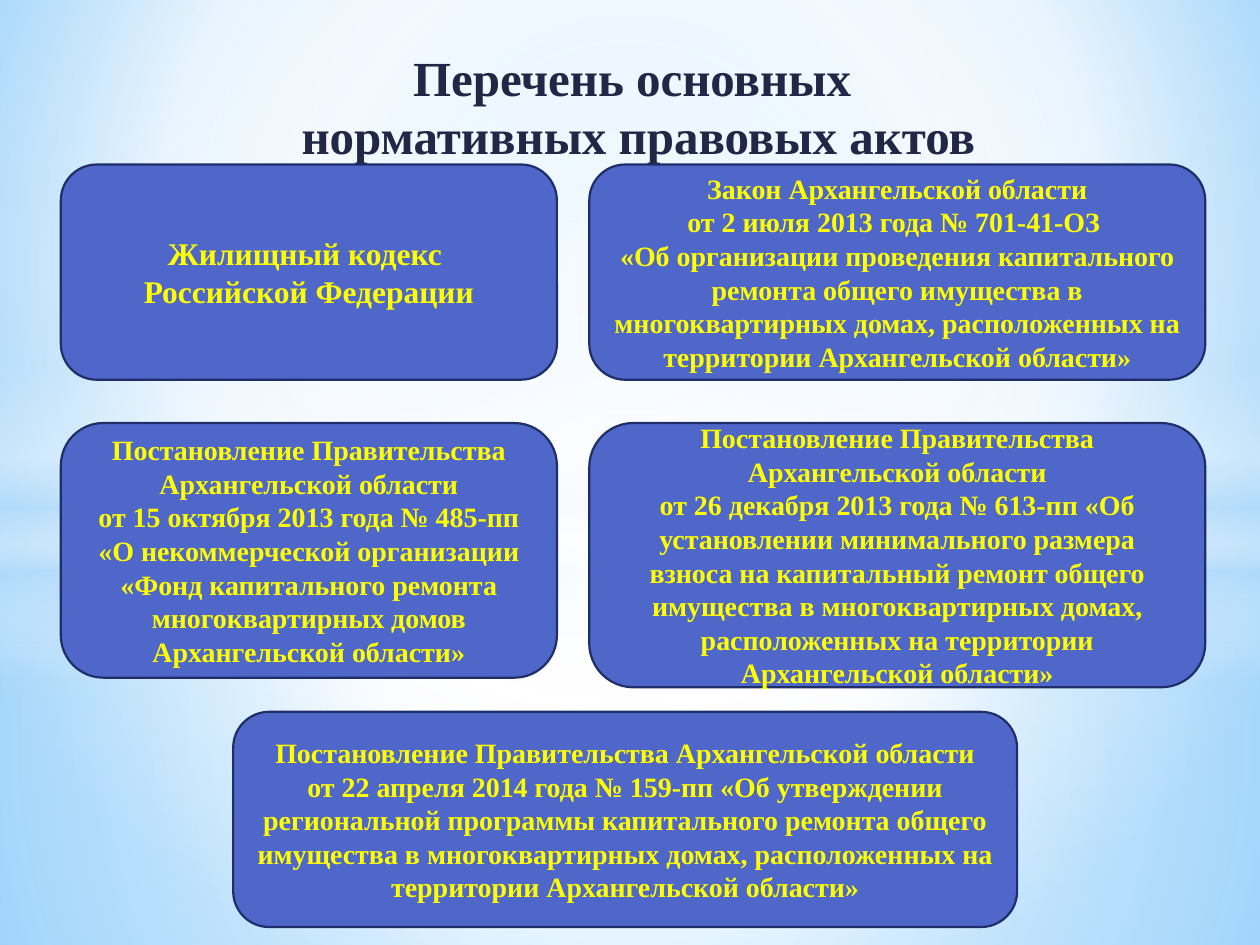
"""Build a slide that lists the main housing repair laws as rounded cards."""
from lxml.etree import SubElement
from pptx import Presentation
from pptx.dml.color import RGBColor as RGB
from pptx.enum.shapes import MSO_SHAPE as Shape
from pptx.enum.text import MSO_ANCHOR as Anchor, MSO_AUTO_SIZE as Auto, PP_ALIGN as Align
from pptx.oxml.ns import qn
from pptx.util import Pt

COLORS = {"title": "212745", "text": "FFFF00", "card": "4E67C8", "edge": "1F2E69",
          "white": "FFFFFF", "pale": "B4DCFA", "sky": "9ED5FF", "blue": "5BB9FF"}
FONT = "Times New Roman"


def write(shape, text, size=16, color="text", indent=0):
    frame = shape.text_frame
    frame.word_wrap = True
    frame.auto_size = Auto.NONE
    frame.vertical_anchor = Anchor.MIDDLE
    frame.text = text
    for para in frame.paragraphs:
        para.alignment = Align.CENTER
        if indent:
            props = para._p.get_or_add_pPr()
            props.set("marL", str(Pt(indent)))
            props.set("indent", "0")
        for run in para.runs:
            font = run.font
            font.name, font.size, font.bold = FONT, Pt(size), True
            font.color.rgb = RGB.from_string(COLORS[color])


def shade(fill, root, stops, focus=None):
    fill.gradient()
    grad = next(root.iter(qn("a:gradFill")))
    for child in list(grad):
        grad.remove(child)
    group = SubElement(grad, qn("a:gsLst"))
    for pos, color, alpha in stops:
        stop = SubElement(group, qn("a:gs"), pos=str(pos * 1000))
        tint = SubElement(stop, qn("a:srgbClr"), val=COLORS[color])
        if alpha < 100:
            SubElement(tint, qn("a:alpha"), val=str(alpha * 1000))
    if focus:
        route = SubElement(grad, qn("a:path"), path="circle")
        sides = {side: str(part * 1000) for side, part in zip("ltrb", focus)}
        SubElement(route, qn("a:fillToRect"), **sides)
    else:
        SubElement(grad, qn("a:lin"), ang="5400000", scaled="0")


deck = Presentation()
deck.slide_width, deck.slide_height = Pt(720), Pt(540)
slide = deck.slides.add_slide(deck.slide_layouts[5])
shapes = slide.shapes
title = shapes.title

shade(slide.background.fill, slide.element,
      [(0, "sky", 100), (60, "white", 100), (100, "blue", 100)], (20, 10, 20, 60))

MID = (50, 50, 50, 50)
glows = [
    (Shape.RECTANGLE, 304.5, 235.5, MID,
     [(0, "white", 91), (37, "white", 76), (100, "pale", 79)]),
    (Shape.RECTANGLE, 0, 304.5, MID,
     [(0, "white", 89), (48, "white", 62), (100, "pale", 79)]),
    (Shape.RECTANGLE, 209, 180, None,
     [(0, "white", 0), (29, "white", 30), (45, "pale", 40),
      (55, "white", 26), (65, "pale", 60), (100, "white", 0)]),
    (Shape.OVAL, 126, 402, MID, [(0, "white", 100), (54, "white", 0), (100, "white", 0)]),
]
for kind, top, height, focus, stops in glows:
    glow = shapes.add_shape(kind, 0, Pt(top), Pt(720), Pt(height))
    glow.shadow.inherit = False
    glow.line.fill.background()
    shade(glow.fill, glow.element, stops, focus)

shapes.element.append(title.element)
title.left, title.top, title.width, title.height = Pt(8.5), Pt(21), Pt(698), Pt(79)
write(title, "Перечень основных \vнормативных правовых актов", size=28, color="title", indent=14.4)

LEFT, RIGHT = (34.75, 283.5), (336.75, 352)
DECREE = "Постановление Правительства Архангельской области\n"
cards = [
    (LEFT, 94, 123, 18, "Жилищный кодекс \nРоссийской Федерации"),
    (RIGHT, 94, 123, 16,
     "Закон Архангельской области\nот 2 июля 2013 года № 701-41-ОЗ \n"
     "«Об организации проведения капитального ремонта общего имущества в "
     "многоквартирных домах, расположенных на территории Архангельской области»"),
    (LEFT, 241.75, 145.5, 16,
     DECREE + "от 15 октября 2013 года № 485-пп «О некоммерческой организации "
     "«Фонд капитального ремонта многоквартирных домов Архангельской области»"),
    (RIGHT, 241.75, 151, 16,
     DECREE + "от 26 декабря 2013 года № 613-пп «Об установлении минимального размера "
     "взноса на капитальный ремонт общего имущества в многоквартирных домах, "
     "расположенных на территории Архангельской области»"),
    ((133.25, 448), 406.75, 123, 16,
     DECREE + "от 22 апреля 2014 года № 159-пп «Об утверждении региональной программы "
     "капитального ремонта общего имущества в многоквартирных домах, "
     "расположенных на территории Архангельской области»"),
]
for (left, width), top, height, size, text in cards:
    card = shapes.add_shape(Shape.ROUNDED_RECTANGLE, Pt(left), Pt(top), Pt(width), Pt(height))
    card.shadow.inherit = False
    card.fill.solid()
    card.fill.fore_color.rgb = RGB.from_string(COLORS["card"])
    card.line.color.rgb = RGB.from_string(COLORS["edge"])
    card.line.width = Pt(1.25)
    write(card, text, size=size)

deck.save("out.pptx")
